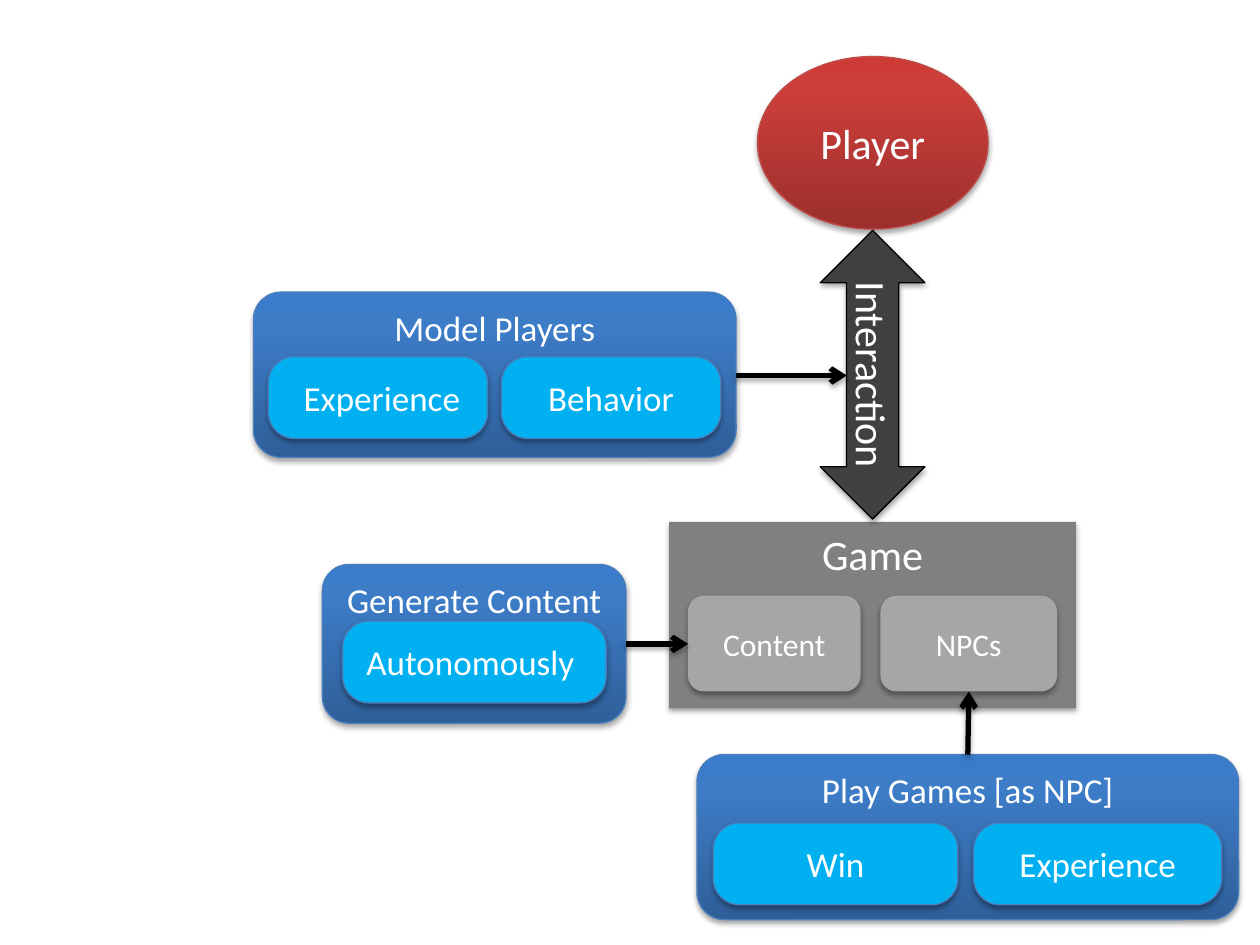
"""Build a slide showing how AI roles connect to the player and the game."""
from copy import deepcopy
from pptx import Presentation
from pptx.dml.color import RGBColor
from pptx.enum.shapes import MSO_CONNECTOR, MSO_SHAPE as Preset
from pptx.enum.text import MSO_ANCHOR as Anchor, PP_ALIGN as Align
from pptx.oxml import parse_xml
from pptx.oxml.ns import nsdecls, qn
from pptx.util import Cm, Pt

WHITE = RGBColor(0xFF, 0xFF, 0xFF)
BLACK = RGBColor(0x00, 0x00, 0x00)
CHARCOAL = RGBColor(0x40, 0x40, 0x40)
GRAY = RGBColor(0x80, 0x80, 0x80)
SILVER = RGBColor(0xA6, 0xA6, 0xA6)
SKY = RGBColor(0x00, 0xB0, 0xF0)
BLUE_EDGE = RGBColor(0x4B, 0x7E, 0xBC)
RED_EDGE = RGBColor(0xBF, 0x4C, 0x48)
BLUES = [RGBColor(0x2F, 0x5F, 0x99), RGBColor(0x3D, 0x7C, 0xC7), RGBColor(0x3A, 0x7C, 0xCB)]
REDS = [RGBColor(0x9C, 0x2F, 0x2D), RGBColor(0xCB, 0x3E, 0x3A), RGBColor(0xCE, 0x3B, 0x37)]

SHADOW = (
    f'<a:effectLst {nsdecls("a")}><a:outerShdw blurRad="40000" dist="23000" dir="5400000" '
    'rotWithShape="0"><a:srgbClr val="000000"><a:alpha val="35000"/></a:srgbClr>'
    '</a:outerShdw></a:effectLst>'
)

ROLES = {
    "role": (Preset.ROUNDED_RECTANGLE, BLUES, BLUE_EDGE, 20, Anchor.TOP),
    "goal": (Preset.ROUNDED_RECTANGLE, SKY, BLUE_EDGE, 20, Anchor.MIDDLE),
    "player": (Preset.OVAL, REDS, RED_EDGE, 24, Anchor.MIDDLE),
    "game": (Preset.RECTANGLE, GRAY, None, 24, Anchor.TOP),
    "part": (Preset.ROUNDED_RECTANGLE, SILVER, None, 18, Anchor.MIDDLE),
    "link": (Preset.LEFT_RIGHT_ARROW, CHARCOAL, BLACK, 24, Anchor.MIDDLE),
}

NODES = [
    ("role", "Model Players", 5.11, 5.89, 9.73, 3.33),
    ("player", "Player", 15.27, 1.14, 4.65, 3.48),
    ("game", "Game", 13.49, 10.52, 8.2, 3.76),
    ("part", "Content", 13.87, 12.01, 3.48, 1.93),
    ("part", "NPCs", 17.75, 12.01, 3.56, 1.93),
    ("link", "Interaction", 14.68, 6.5, 5.82, 2.11),
    ("goal", " Experience", 5.41, 7.19, 4.42, 1.65),
    ("goal", "Behavior", 10.11, 7.19, 4.42, 1.65),
    ("role", "Generate Content", 6.5, 11.38, 6.12, 3.2),
    ("goal", "Autonomously ", 6.91, 12.52, 5.31, 1.65),
    ("role", "Play Games [as NPC]", 14.05, 15.21, 10.92, 3.33),
    ("goal", "Win", 14.38, 16.59, 4.93, 1.65),
    ("goal", "Experience", 19.63, 16.59, 5, 1.65),
]

INFLUENCES = [
    (14.83, 7.57, 17.07, 7.57),
    (12.62, 12.98, 13.87, 12.98),
    (19.51, 15.21, 19.53, 13.94),
]


def fill_gradient(node, colors):
    node.fill.gradient()
    node.fill.gradient_angle = 90
    stop_list = node._element.spPr.find(".//" + qn("a:gsLst"))
    stop_list.append(deepcopy(stop_list[-1]))
    for stop, color, position in zip(node.fill.gradient_stops, colors, (0, 0.8, 1)):
        stop.color.rgb = color
        stop.position = position


deck = Presentation()
deck.slide_width, deck.slide_height = Cm(25.4), Cm(19.05)
slide = deck.slides.add_slide(deck.slide_layouts[6])

for kind, label, *box in NODES:
    preset, paint, edge, size, anchor = ROLES[kind]
    node = slide.shapes.add_shape(preset, *map(Cm, box))
    if kind == "goal":
        node.adjustments[0] = 0.32
    if kind == "link":
        node.rotation = 90
    if isinstance(paint, list):
        fill_gradient(node, paint)
    else:
        node.fill.solid()
        node.fill.fore_color.rgb = paint
    if edge is None:
        node.line.fill.background()
    else:
        node.line.color.rgb = edge
        node.line.width = Pt(0.75)
    node._element.spPr.append(parse_xml(SHADOW))

    frame = node.text_frame
    frame.text = label
    frame.vertical_anchor = anchor
    frame.paragraphs[0].alignment = Align.CENTER
    font = frame.paragraphs[0].runs[0].font
    for name, value in {"name": "Calibri", "size": Pt(size)}.items():
        setattr(font, name, value)
    font.color.rgb = WHITE

for ends in INFLUENCES:
    influence = slide.shapes.add_connector(MSO_CONNECTOR.STRAIGHT, *map(Cm, ends))
    influence.line.color.rgb = BLACK
    influence.line.width = Pt(3)
    properties = influence._element.spPr
    properties.find(qn("a:ln")).append(parse_xml(f'<a:tailEnd {nsdecls("a")} type="arrow"/>'))
    properties.append(parse_xml(SHADOW))

deck.save("out.pptx")
